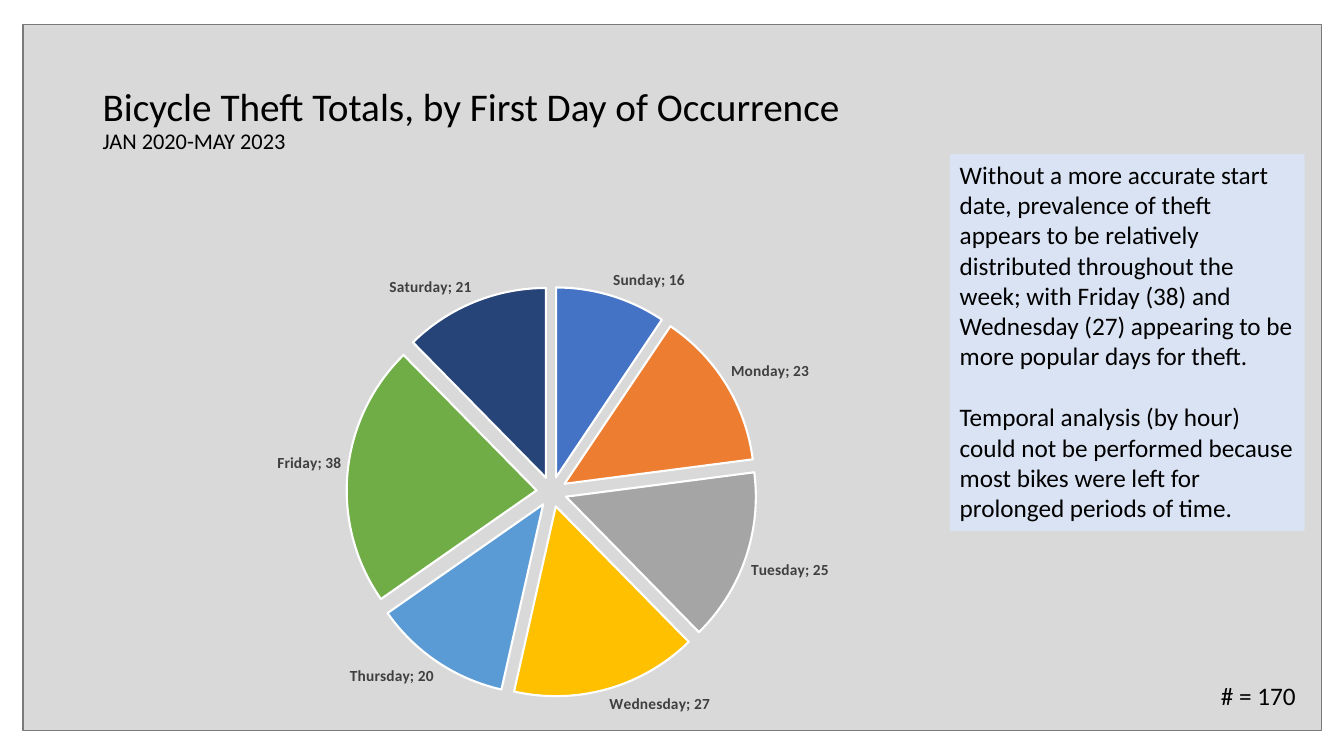
"""Builds a slide about bicycle thefts by day of the week."""
from lxml import etree
from pptx import Presentation
from pptx import util as u
from pptx.chart import data as chart_data
from pptx.dml.color import RGBColor
from pptx.enum import chart as charts, shapes, text
from pptx.oxml import ns

WIDTH, HEIGHT = 13.33, 7.5
FONT = "Calibri"
BLACK = RGBColor(0x00, 0x00, 0x00)
WHITE = RGBColor(0xFF, 0xFF, 0xFF)
PANEL = RGBColor(0xD9, 0xD9, 0xD9)
BORDER = RGBColor(0x7A, 0x7A, 0x7A)
NOTE = RGBColor(0xDA, 0xE3, 0xF3)
LABEL = RGBColor(0x40, 0x40, 0x40)

THEFTS = [
    ("Sunday", 16, RGBColor(0x44, 0x72, 0xC4)),
    ("Monday", 23, RGBColor(0xED, 0x7D, 0x31)),
    ("Tuesday", 25, RGBColor(0xA5, 0xA5, 0xA5)),
    ("Wednesday", 27, RGBColor(0xFF, 0xC0, 0x00)),
    ("Thursday", 20, RGBColor(0x5B, 0x9B, 0xD5)),
    ("Friday", 38, RGBColor(0x70, 0xAD, 0x47)),
    ("Saturday", 21, RGBColor(0x26, 0x44, 0x78)),
]
TITLE = [("Bicycle Theft Totals, by First Day of Occurrence", 28), ("JAN 2020-MAY 2023", 16)]
FINDINGS = [
    "Without a more accurate start date, prevalence of theft appears to be relatively "
    "distributed throughout the week; with Friday (38) and Wednesday (27) appearing to be "
    "more popular days for theft.",
    "Temporal analysis (by hour) could not be performed because most bikes were left for "
    "prolonged periods of time.",
]
TOTAL = f"# = {sum(count for _, count, _ in THEFTS)}"

AREAS = {
    "panel": (0.23, 0.24, 12.88, 7.01),
    "title": (0.92, 0.4, 11.5, 1.6),
    "chart": (0.31, 2.5, 10.43, 4.76),
    "findings": (9.42, 1.53, 3.52, 3.74),
    "total": (11.27, 6.7, 1.68, 0.4),
}
PIE_SHARES = {"x": 0.3, "y": 0.07, "w": 0.39, "h": 0.86}
EXPLOSION = 8


def area(name):
    return [u.Inches(length) for length in AREAS[name]]


def apply(target, **values):
    for name, value in values.items():
        setattr(target, name, value)


def style(font, size, color=BLACK, bold=False):
    apply(font, name=FONT, size=u.Pt(size), bold=bold)
    font.color.rgb = color


def add_run(para, words, size):
    span = para.add_run()
    span.text = words
    style(span.font, size)


def add_rectangle(page, name, fill):
    box = page.shapes.add_shape(shapes.MSO_SHAPE.RECTANGLE, *area(name))
    box.shadow.inherit = False
    box.fill.solid()
    box.fill.fore_color.rgb = fill
    box.line.fill.background()
    return box


def add_text(page, name):
    frame = page.shapes.add_textbox(*area(name)).text_frame
    frame.word_wrap = True
    return frame


def element(tag, value):
    node = etree.Element(ns.qn(f"c:{tag}"))
    node.set("val", str(value))
    return node


def add_pie(page):
    values = chart_data.CategoryChartData()
    values.categories = [day for day, _, _ in THEFTS]
    values.add_series("Series 1", [count for _, count, _ in THEFTS])
    chart = page.shapes.add_chart(charts.XL_CHART_TYPE.PIE, *area("chart"), values).chart
    apply(chart, has_legend=False, has_title=False)
    style(chart.font, 10)
    plot = chart.plots[0]
    plot.vary_by_categories = True
    series = plot.series[0]
    series_xml = series._element
    series_xml.find(ns.qn("c:tx")).addnext(element("explosion", EXPLOSION))
    for index, (_, _, color) in enumerate(THEFTS):
        slice_format = series.points[index].format
        slice_format.fill.solid()
        slice_format.fill.fore_color.rgb = color
        slice_format.line.color.rgb = WHITE
        slice_format.line.width = u.Pt(1.5)

    labels = series.data_labels
    apply(labels, show_value=True, show_category_name=True, show_percentage=False,
          position=charts.XL_LABEL_POSITION.OUTSIDE_END)
    style(labels.font, 11, LABEL, True)
    separator = etree.Element(ns.qn("c:separator"))
    separator.text = "; "
    series_xml.find(ns.qn("c:dLbls")).find(ns.qn("c:showBubbleSize")).addnext(separator)

    plot_area = chart._chartSpace.find(".//" + ns.qn("c:plotArea"))
    for old in plot_area.findall(ns.qn("c:layout")):
        plot_area.remove(old)
    layout = etree.Element(ns.qn("c:layout"))
    manual = etree.SubElement(layout, ns.qn("c:manualLayout"))
    settings = {"layoutTarget": "inner", "xMode": "edge", "yMode": "edge", **PIE_SHARES}
    for tag, value in settings.items():
        manual.append(element(tag, value))
    plot_area.insert(0, layout)


def main():
    deck = Presentation()
    apply(deck, slide_width=u.Inches(WIDTH), slide_height=u.Inches(HEIGHT))
    page = deck.slides.add_slide(deck.slide_layouts[6])

    panel = add_rectangle(page, "panel", PANEL)
    panel.line.color.rgb = BORDER
    panel.line.width = u.Pt(1)

    frame = add_text(page, "title")
    frame.vertical_anchor = text.MSO_ANCHOR.MIDDLE
    para = frame.paragraphs[0]
    para.line_spacing = 0.9
    for index, (words, size) in enumerate(TITLE):
        if index:
            para.add_line_break()
        add_run(para, words, size)

    add_pie(page)

    frame = add_rectangle(page, "findings", NOTE).text_frame
    apply(frame, word_wrap=True, vertical_anchor=text.MSO_ANCHOR.TOP)
    for index, words in enumerate(FINDINGS):
        para = frame.add_paragraph() if index else frame.paragraphs[0]
        apply(para, alignment=text.PP_ALIGN.LEFT, space_before=u.Pt(22 * index))
        add_run(para, words, 18)

    para = add_text(page, "total").paragraphs[0]
    para.alignment = text.PP_ALIGN.RIGHT
    add_run(para, TOTAL, 18)

    deck.save("out.pptx")


if __name__ == "__main__":
    main()
